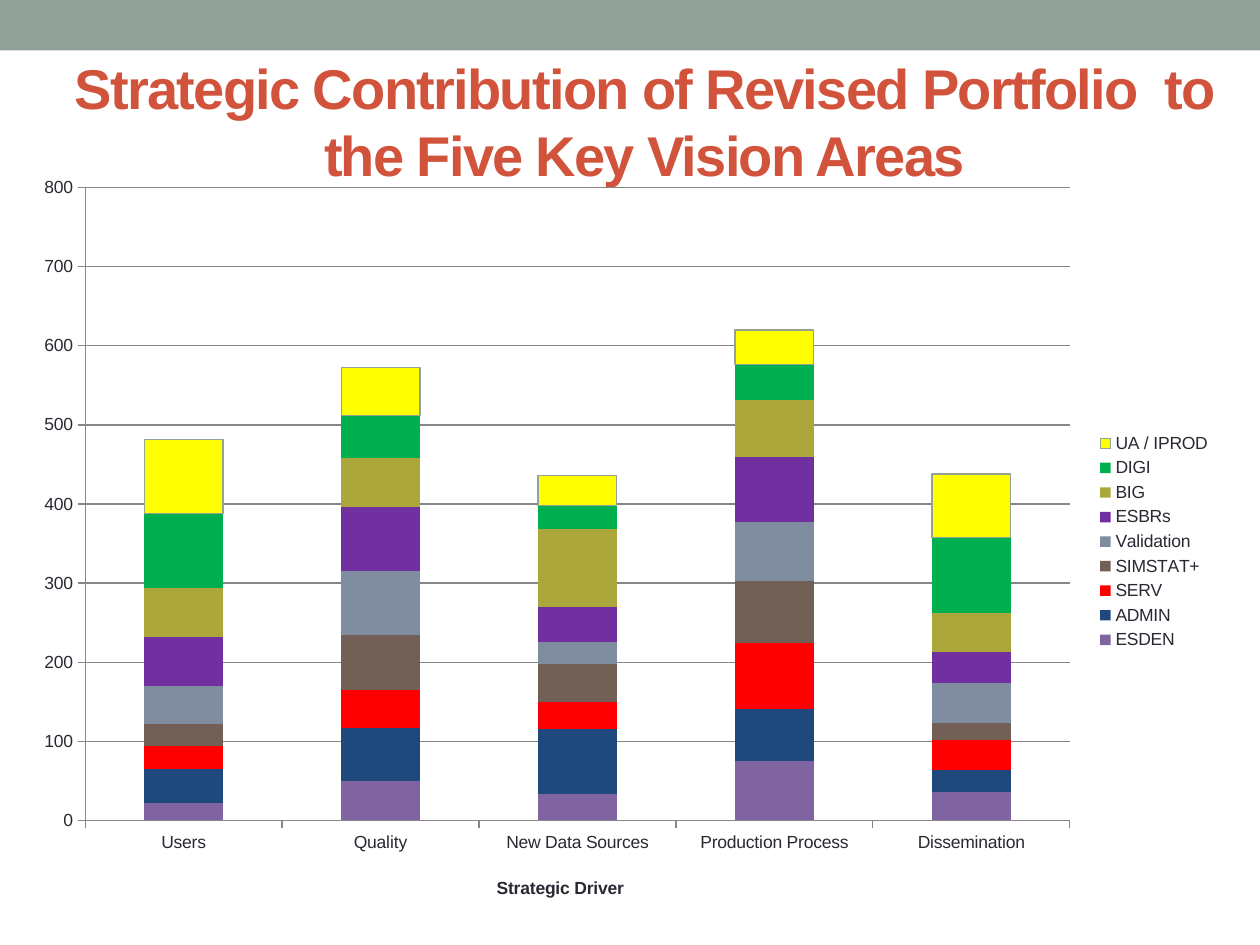
from lxml import etree
from pptx import Presentation
from pptx.chart.data import CategoryChartData
from pptx.dml.color import RGBColor
from pptx.enum.chart import XL_CHART_TYPE, XL_LEGEND_POSITION, XL_TICK_MARK
from pptx.enum.shapes import MSO_SHAPE
from pptx.enum.text import MSO_ANCHOR, PP_ALIGN
from pptx.oxml.ns import qn
from pptx.util import Inches, Pt

STACKED = XL_CHART_TYPE.COLUMN_STACKED
RIGHT = XL_LEGEND_POSITION.RIGHT
OUTSIDE = XL_TICK_MARK.OUTSIDE
RECT = MSO_SHAPE.RECTANGLE
MIDDLE = MSO_ANCHOR.MIDDLE
CENTER = PP_ALIGN.CENTER

FONT = "Arial"
COLORS = {"band": "93A299", "title": "D2533C", "text": "292934", "grid": "868686"}
TITLE = "Strategic Contribution of Revised Portfolio  to the Five Key Vision Areas"
DRIVERS = ["Users", "Quality", "New Data Sources", "Production Process", "Dissemination"]
PROJECTS = [
    ("ESDEN", "8064A2", (22, 50, 33, 75, 36)),
    ("ADMIN", "1F497D", (43, 67, 83, 66, 28)),
    ("SERV", "FF0000", (29, 48, 34, 83, 38)),
    ("SIMSTAT+", "726056", (28, 70, 48, 79, 21)),
    ("Validation", "808DA0", (48, 80, 27, 74, 51)),
    ("ESBRs", "7030A0", (62, 81, 45, 83, 39)),
    ("BIG", "ACA73B", (62, 62, 98, 72, 49)),
    ("DIGI", "00B050", (94, 54, 30, 44, 96)),
    ("UA / IPROD", "FFFF00", (94, 61, 38, 44, 80)),
]


def color(name):
    return RGBColor.from_string(COLORS.get(name, name))


def style(font, size, name, bold=False):
    font.name, font.size, font.bold = FONT, Pt(size), bold
    font.color.rgb = color(name)


def place(part, index, **spots):
    for old in part.findall(qn("c:layout")):
        part.remove(old)
    layout = etree.Element(qn("c:layout"))
    manual = etree.SubElement(layout, qn("c:manualLayout"))
    if "plot" in part.tag:
        etree.SubElement(manual, qn("c:layoutTarget")).set("val", "inner")
    for key in ("x", "y"):
        etree.SubElement(manual, qn(f"c:{key}Mode")).set("val", "edge")
    for key, spot in spots.items():
        etree.SubElement(manual, qn(f"c:{key}")).set("val", str(spot))
    part.insert(index, layout)


def add_band(slide):
    band = slide.shapes.add_shape(RECT, 0, 0, Inches(10), Inches(0.4))
    band.shadow.inherit = False
    band.fill.solid()
    band.fill.fore_color.rgb = color("band")
    band.line.fill.background()


def add_title(slide):
    box = slide.shapes.add_textbox(Inches(0.35), Inches(0.3), Inches(9.53), Inches(1.32))
    frame = box.text_frame
    frame.word_wrap = True
    frame.vertical_anchor = MIDDLE
    para = frame.paragraphs[0]
    para.text = TITLE
    para.alignment = CENTER
    style(para.font, 32, "title", True)
    para.runs[0].font._element.set("spc", "-100")


def add_chart(slide):
    data = CategoryChartData(number_format="0")
    data.categories = DRIVERS
    for name, _, values in PROJECTS:
        data.add_series(name, values)
    chart = slide.shapes.add_chart(
        STACKED, Inches(0.2), Inches(1.31), Inches(9.53), Inches(5.98), data
    ).chart
    style(chart.font, 10, "text")
    chart.has_title = False

    plot = chart.plots[0]
    plot.gap_width, plot.overlap = 150, 100
    plot.vary_by_categories = False
    for series, (_, fill, _) in zip(plot.series, PROJECTS):
        series.format.fill.solid()
        series.format.fill.fore_color.rgb = color(fill)
    series.format.line.color.rgb = color("band")
    series.format.line.width = Pt(0.75)

    cats, vals = chart.category_axis, chart.value_axis
    vals.minimum_scale, vals.maximum_scale, vals.major_unit = 0, 800, 100
    vals.has_major_gridlines = True
    vals.tick_labels.number_format = "0"
    vals.tick_labels.number_format_is_linked = False
    for axis in (cats, vals):
        axis.major_tick_mark = OUTSIDE
    for part in (cats, vals, vals.major_gridlines):
        part.format.line.color.rgb = color("grid")
        part.format.line.width = Pt(0.75)

    para = cats.axis_title.text_frame.paragraphs[0]
    para.text = "Strategic Driver"
    style(para.font, 10, "text", True)

    chart.has_legend = True
    legend = chart.legend
    legend.position = RIGHT
    legend.include_in_layout = False
    style(legend.font, 10, "text")

    place(plot._element.getparent(), 0, x=0.05, y=0.03, w=0.82, h=0.84)
    place(cats.axis_title._element, 1, x=0.39, y=0.94)
    place(legend._element, 1, x=0.89, y=0.35, w=0.1, h=0.3)


def main():
    deck = Presentation()
    deck.slide_width, deck.slide_height = Inches(10), Inches(7.5)
    slide = deck.slides.add_slide(deck.slide_layouts[6])
    add_band(slide)
    add_title(slide)
    add_chart(slide)
    deck.save("out.pptx")


if __name__ == "__main__":
    main()
